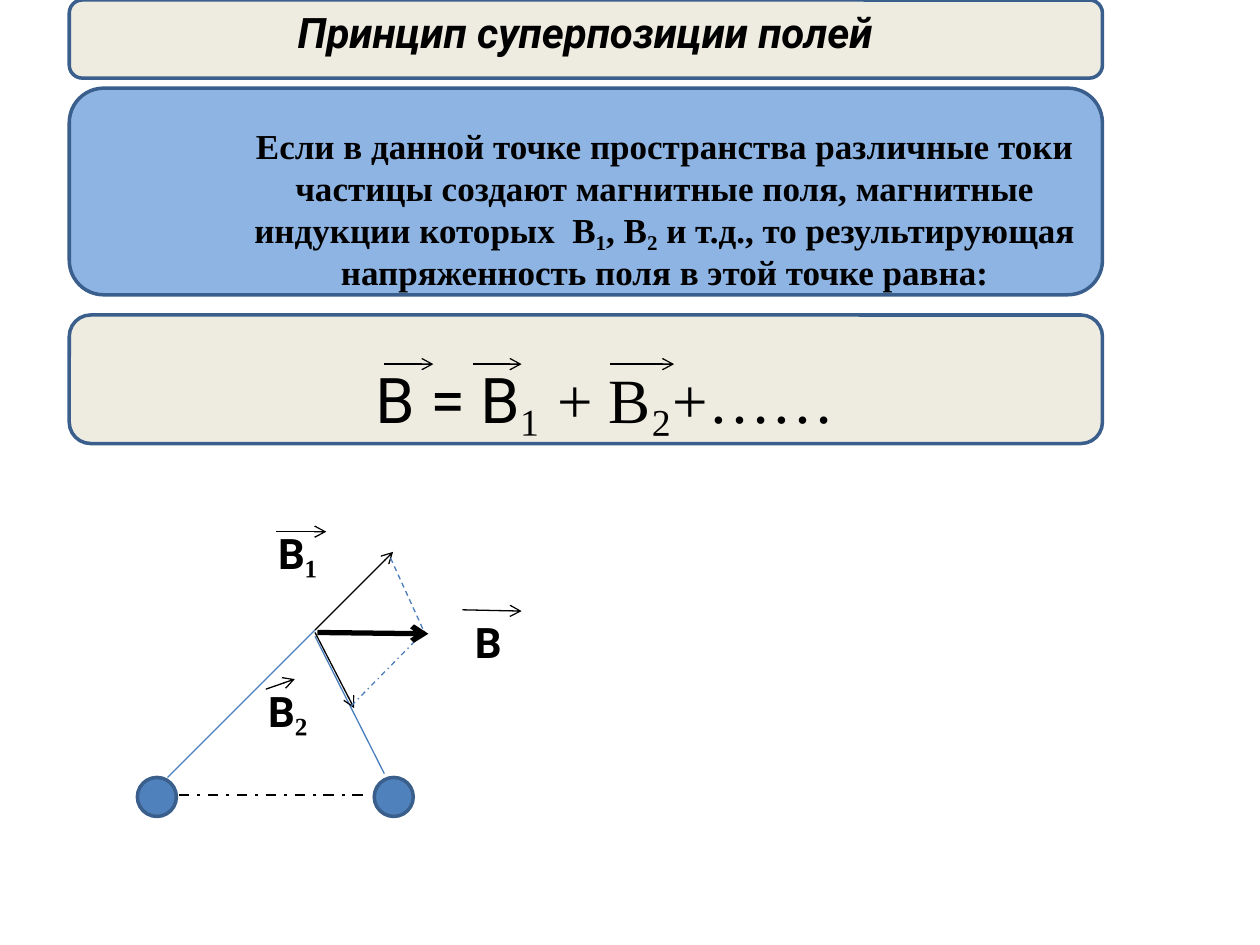
"""Build the slide on the superposition principle of magnetic fields."""
from typing import NamedTuple, Optional

import lxml.etree
import pptx
import pptx.dml.color
import pptx.enum.dml
import pptx.enum.shapes
import pptx.enum.text
import pptx.oxml.ns
import pptx.util

Inches = pptx.util.Inches
Kind = pptx.enum.shapes.MSO_SHAPE
Dash = pptx.enum.dml.MSO_LINE
Align = pptx.enum.text.PP_ALIGN

BLACK, CREAM, SKY = "000000", "EEECE1", "8EB4E3"
CHARGE, OUTLINE, RAY = "4F81BD", "3A5F8C", "4B7EBC"
SANS, SERIF = "Roboto", "Times New Roman"


class Panel(NamedTuple):
    top: float
    height: float
    fill: str


class Segment(NamedTuple):
    start: tuple[float, float]
    end: tuple[float, float]
    color: str = BLACK
    width: float = 0.75
    dash: Optional[Dash] = None
    arrow: bool = False


class Label(NamedTuple):
    left: float
    top: float
    width: float
    index: str


PANELS = [Panel(0, 0.62, CREAM), Panel(0.7, 1.64, SKY), Panel(2.5, 1.02, CREAM)]
CHARGE_LEFTS = [1.09, 2.97]
FORMULA_ARROWS = [(3.05, 3.44), (3.75, 4.14), (4.84, 5.35)]
SEGMENTS = [
    Segment((1.33, 6.17), (2.5, 5), RAY),
    Segment((3.05, 6.14), (2.5, 5.05), RAY),
    Segment((1.42, 6.31), (2.94, 6.31), width=1.5, dash=Dash.DASH_DOT),
    Segment((2.5, 5), (3.12, 4.38), arrow=True),
    Segment((2.5, 5.02), (2.81, 5.62), arrow=True),
    Segment((3.1, 4.43), (3.36, 5), RAY, dash=Dash.DASH),
    Segment((2.79, 5.6), (3.38, 5), RAY, dash=Dash.DASH_DOT),
    Segment((2.52, 5.02), (3.4, 5.03), width=3, arrow=True),
    Segment((2.19, 4.22), (2.59, 4.22), arrow=True),
    Segment((2.11, 5.47), (2.34, 5.39), arrow=True),
    Segment((3.67, 4.84), (4.14, 4.85), arrow=True),
]
LABELS = [Label(2.11, 4.14, 0.7, "₁"), Label(2.03, 5.39, 0.62, "₂"),
          Label(3.67, 4.84, 0.94, "")]


def rgb(color: str) -> pptx.dml.color.RGBColor:
    return pptx.dml.color.RGBColor.from_string(color)


def add_solid(page, kind: Kind, left: float, top: float, width: float,
              height: float, fill: str):
    shape = page.shapes.add_shape(
        kind, Inches(left), Inches(top), Inches(width), Inches(height))
    shape.shadow.inherit = False
    shape.fill.solid()
    shape.fill.fore_color.rgb = rgb(fill)
    shape.line.color.rgb = rgb(OUTLINE)
    shape.line.width = pptx.util.Pt(2)
    return shape


def add_segment(page, segment: Segment) -> None:
    connector = page.shapes.add_connector(
        pptx.enum.shapes.MSO_CONNECTOR.STRAIGHT,
        *map(Inches, segment.start + segment.end))
    connector.line.color.rgb = rgb(segment.color)
    connector.line.width = pptx.util.Pt(segment.width)
    if segment.dash is not None:
        connector.line.dash_style = segment.dash
    qualify = pptx.oxml.ns.qn
    properties = connector.element.spPr
    if segment.arrow:
        outline = properties.find(qualify("a:ln"))
        lxml.etree.SubElement(outline, qualify("a:tailEnd"), type="arrow")
    lxml.etree.SubElement(properties, qualify("a:effectLst"))


def write_text(box, *spans: tuple[str, str], size: float, bold: bool = False,
               italic: bool = False, align: Align = Align.CENTER) -> None:
    frame = box.text_frame
    frame.word_wrap = True
    frame.auto_size = pptx.enum.text.MSO_AUTO_SIZE.SHAPE_TO_FIT_TEXT
    frame.vertical_anchor = pptx.enum.text.MSO_ANCHOR.TOP
    para = frame.paragraphs[0]
    para.alignment = align
    for text, font in spans:
        span = para.add_run()
        span.text = text
        span.font.name = font
        span.font.size = pptx.util.Pt(size)
        span.font.bold = bold
        span.font.italic = italic
        span.font.color.rgb = rgb(BLACK)


def add_box(page, left: float, top: float, width: float, height: float):
    return page.shapes.add_textbox(
        Inches(left), Inches(top), Inches(width), Inches(height))


def main() -> None:
    deck = pptx.Presentation()
    deck.slide_width, deck.slide_height = Inches(10), Inches(7.5)
    page = deck.slides.add_slide(deck.slide_layouts.get_by_name("Title Only"))

    title = page.shapes.title
    for panel in PANELS:
        shape = add_solid(page, Kind.FLOWCHART_ALTERNATE_PROCESS,
                          0.55, panel.top, 8.2, panel.height, panel.fill)
        title.element.addprevious(shape.element)
    title.left, title.top = Inches(0.7), Inches(0)
    title.width, title.height = Inches(7.89), Inches(0.51)
    write_text(title, ("Принцип суперпозиции полей", SANS),
               size=24, bold=True, italic=True)

    statement = ("Если в данной точке пространства различные токи частицы создают "
                 "магнитные поля, магнитные индукции которых  В₁, В₂ и т.д., то "
                 "результирующая напряженность поля в этой точке равна:")
    write_text(add_box(page, 1.8, 0.94, 6.95, 1.45), (statement, SERIF),
               size=20, bold=True)
    write_text(add_box(page, 1.09, 2.81, 7.42, 0.71),
               ("В = В", SANS), ("₁ + В₂+……", SERIF), size=36)
    for start, end in FORMULA_ARROWS:
        add_segment(page, Segment((start, 2.89), (end, 2.89), arrow=True))

    for left in CHARGE_LEFTS:
        add_solid(page, Kind.FLOWCHART_CONNECTOR, left, 6.17, 0.31, 0.31, CHARGE)
    for segment in SEGMENTS:
        add_segment(page, segment)
    for label in LABELS:
        spans = [("B", SANS)] + ([(label.index, SERIF)] if label.index else [])
        write_text(add_box(page, label.left, label.top, label.width, 0.51),
                   *spans, size=24, bold=True, align=Align.LEFT)

    deck.save("out.pptx")


if __name__ == "__main__":
    main()
